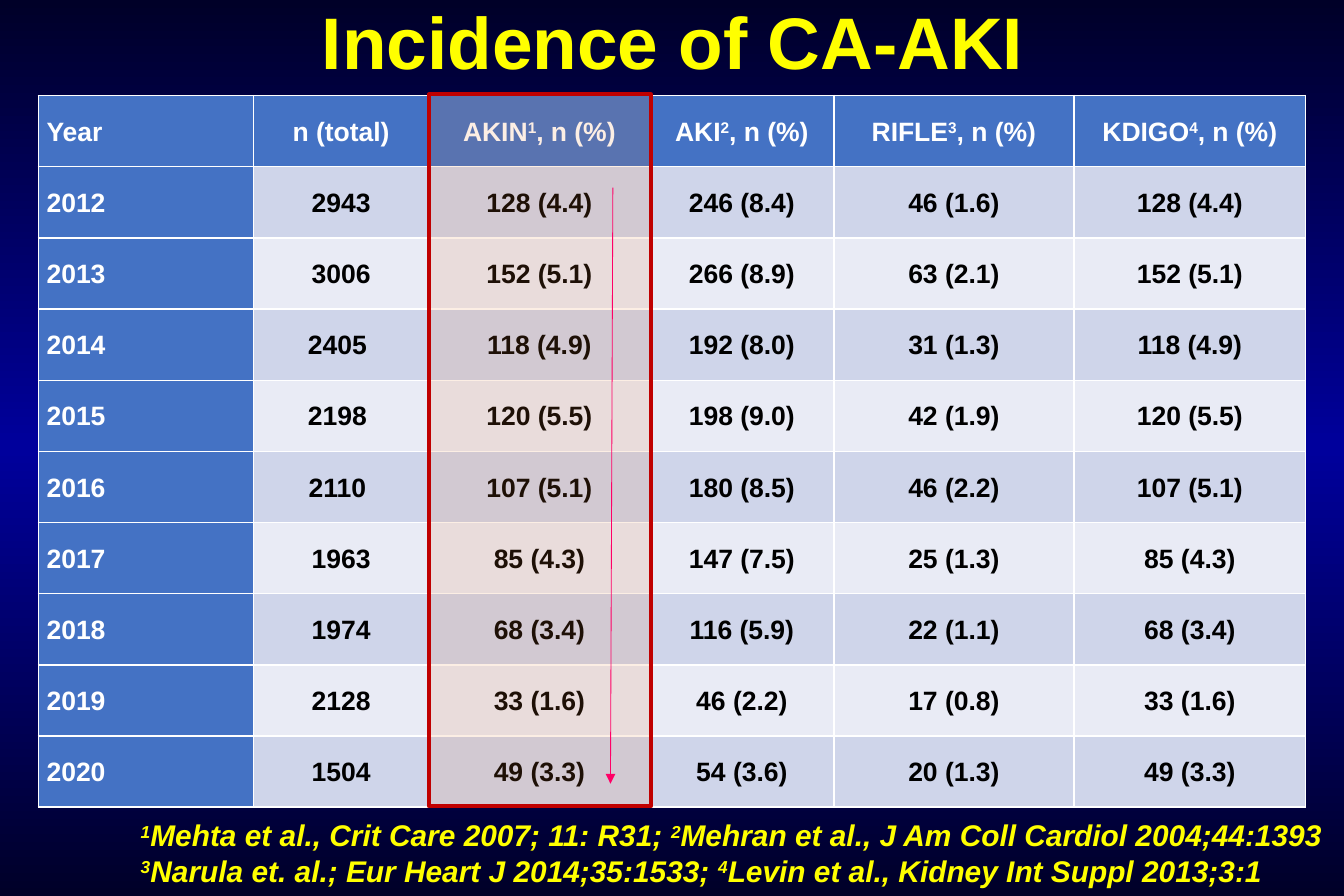
"""Build a slide on the yearly incidence of CA-AKI."""
from copy import deepcopy
from typing import NamedTuple

from lxml.etree import SubElement
from pptx import Presentation
from pptx.dml.color import RGBColor
from pptx.enum.shapes import MSO_CONNECTOR as Link, MSO_SHAPE as Shape
from pptx.enum.text import MSO_ANCHOR as Anchor, MSO_AUTO_SIZE as Fit, PP_ALIGN as Align
from pptx.oxml.ns import qn
from pptx.slide import Slide
from pptx.table import _Cell as Cell
from pptx.text.text import TextFrame
from pptx.util import Inches, Length, Pt

NAVY = RGBColor(0x00, 0x00, 0x28)
BLUE = RGBColor(0x00, 0x00, 0x9C)
YELLOW = RGBColor(0xFF, 0xFF, 0x00)
WHITE = RGBColor(0xFF, 0xFF, 0xFF)
BLACK = RGBColor(0x00, 0x00, 0x00)
HEAD = RGBColor(0x44, 0x72, 0xC4)
BANDS = (RGBColor(0xCF, 0xD5, 0xEA), RGBColor(0xE9, 0xEB, 0xF5))
ORANGE = RGBColor(0xED, 0x7D, 0x31)
RED = RGBColor(0xC0, 0x00, 0x00)
PINK = RGBColor(0xFF, 0x00, 0x66)

FONT = "Arial"
WIDTHS = (1.8, 1.47, 1.85, 1.54, 2.01, 1.94)
HIGH = 5.96


class Row(NamedTuple):
    year: str
    total: str
    akin: str
    aki: str
    rifle: str
    kdigo: str


ROWS = (
    Row("Year", "n (total)", "AKIN^1^, n (%)", "AKI^2^, n (%)", "RIFLE^3^, n (%)", "KDIGO^4^, n (%)"),
    Row("2012", "2943", "128 (4.4)", "246 (8.4)", "46 (1.6)", "128 (4.4)"),
    Row("2013", "3006", "152 (5.1)", "266 (8.9)", "63 (2.1)", "152 (5.1)"),
    Row("2014", "2405 ", "118 (4.9)", "192 (8.0)", "31 (1.3)", "118 (4.9)"),
    Row("2015", "2198 ", "120 (5.5)", "198 (9.0)", "42 (1.9)", "120 (5.5)"),
    Row("2016", "2110 ", "107 (5.1)", "180 (8.5)", "46 (2.2)", "107 (5.1)"),
    Row("2017", "1963", "85 (4.3)", "147 (7.5)", "25 (1.3)", "85 (4.3)"),
    Row("2018", "1974", "68 (3.4)", "116 (5.9)", "22 (1.1)", "68 (3.4)"),
    Row("2019", "2128", "33 (1.6)", "46 (2.2)", "17 (0.8)", "33 (1.6)"),
    Row("2020", "1504", "49 (3.3)", "54 (3.6)", "20 (1.3)", "49 (3.3)"),
)
NOTES = (
    "^1^Mehta et al., Crit Care 2007; 11: R31; ^2^Mehran et al., J Am Coll Cardiol 2004;44:1393\n"
    "^3^Narula et. al.; Eur Heart J 2014;35:1533; ^4^Levin et al., Kidney Int Suppl 2013;3:1"
)


def write(frame: TextFrame, text: str, *, size: float, color: RGBColor, italic: bool = False,
          align: Align = Align.LEFT, lead: float | Length = 1.0, after: float = 0) -> None:
    """Fill a frame with bold text; carets enclose superscripts."""
    for i, line in enumerate(text.split("\n")):
        para = frame.paragraphs[0] if i == 0 else frame.add_paragraph()
        para.alignment, para.line_spacing = align, lead
        para.space_before, para.space_after = Pt(0), Pt(after)
        for j, part in enumerate(line.split("^")):
            if not part:
                continue
            run = para.add_run()
            run.text = part
            font = run.font
            font.name, font.size, font.bold, font.italic = FONT, Pt(size), True, italic
            font.color.rgb = color
            if j % 2:
                run._r.get_or_add_rPr().set("baseline", "30000")


def paint(slide: Slide) -> None:
    """Give the slide its dark to bright to dark gradient."""
    fill = slide.background.fill
    fill.gradient()
    fill.gradient_angle = 90
    stops = slide.element.find(".//" + qn("a:gsLst"))
    stops.append(deepcopy(stops[0]))
    for stop, color, place in zip(fill.gradient_stops, (NAVY, BLUE, NAVY), (0, 0.5, 1)):
        stop.color.rgb, stop.position = color, place


def edge(cell: Cell) -> None:
    """Draw a thin white border round a cell."""
    props = cell._tc.get_or_add_tcPr()
    for side in ("lnL", "lnR", "lnT", "lnB"):
        line = SubElement(props, qn(f"a:{side}"), w=str(Pt(1)))
        solid = SubElement(line, qn("a:solidFill"))
        SubElement(solid, qn("a:srgbClr"), val=str(WHITE))


def grid(slide: Slide) -> None:
    """Add the table of yearly counts."""
    table = slide.shapes.add_table(len(ROWS), len(WIDTHS), Inches(0.32), Inches(0.8),
                                   Inches(sum(WIDTHS)), Inches(HIGH)).table
    for col, width in zip(table.columns, WIDTHS):
        col.width = Inches(width)
    for r, row in enumerate(ROWS):
        table.rows[r].height = Inches(HIGH / len(ROWS))
        for c, text in enumerate(row):
            cell = table.cell(r, c)
            head = r == 0 or c == 0
            edge(cell)
            cell.fill.solid()
            cell.fill.fore_color.rgb = HEAD if head else BANDS[(r - 1) % 2]
            cell.vertical_anchor = Anchor.MIDDLE
            cell.margin_left = cell.margin_right = Inches(0.07)
            cell.margin_top = cell.margin_bottom = 0
            write(cell.text_frame, text, size=16, color=WHITE if head else BLACK,
                  align=Align.CENTER if c else Align.LEFT, lead=1.07, after=8)


def mark(slide: Slide) -> None:
    """Frame the AKIN column and add its falling arrow."""
    box = slide.shapes.add_shape(Shape.RECTANGLE, Inches(3.59), Inches(0.79), Inches(1.86), Inches(HIGH))
    box.shadow.inherit = False
    box.fill.solid()
    box.fill.fore_color.rgb = ORANGE
    tint = box._element.spPr.find(qn("a:solidFill"))[0]
    SubElement(tint, qn("a:alpha"), val="13000")
    box.line.color.rgb, box.line.width = RED, Pt(2.25)

    arrow = slide.shapes.add_connector(Link.STRAIGHT, Inches(5.13), Inches(1.57), Inches(5.11), Inches(6.56))
    arrow.line.color.rgb, arrow.line.width = PINK, Pt(0.5)
    SubElement(arrow.line._get_or_add_ln(), qn("a:tailEnd"), type="triangle")
    SubElement(arrow._element.spPr, qn("a:effectLst"))


def main() -> None:
    """Compose and save the slide."""
    deck = Presentation()
    deck.slide_width, deck.slide_height = Inches(11.25), Inches(7.5)
    slide = deck.slides.add_slide(deck.slide_layouts[5])
    paint(slide)

    title = slide.shapes.title
    title.left, title.top = Inches(0.01), Inches(-0.04)
    title.width, title.height = Inches(11.25), Inches(0.94)
    title.text_frame.auto_size = Fit.NONE
    title.text_frame.vertical_anchor = Anchor.MIDDLE
    write(title.text_frame, "Incidence of CA-AKI", size=44, color=YELLOW, align=Align.CENTER, lead=Pt(40))

    notes = slide.shapes.add_textbox(Inches(1.08), Inches(6.79), Inches(10.17), Inches(0.71)).text_frame
    notes.word_wrap, notes.auto_size = True, Fit.SHAPE_TO_FIT_TEXT
    write(notes, NOTES, size=18, color=YELLOW, italic=True)

    grid(slide)
    mark(slide)
    deck.save("out.pptx")


if __name__ == "__main__":
    main()
